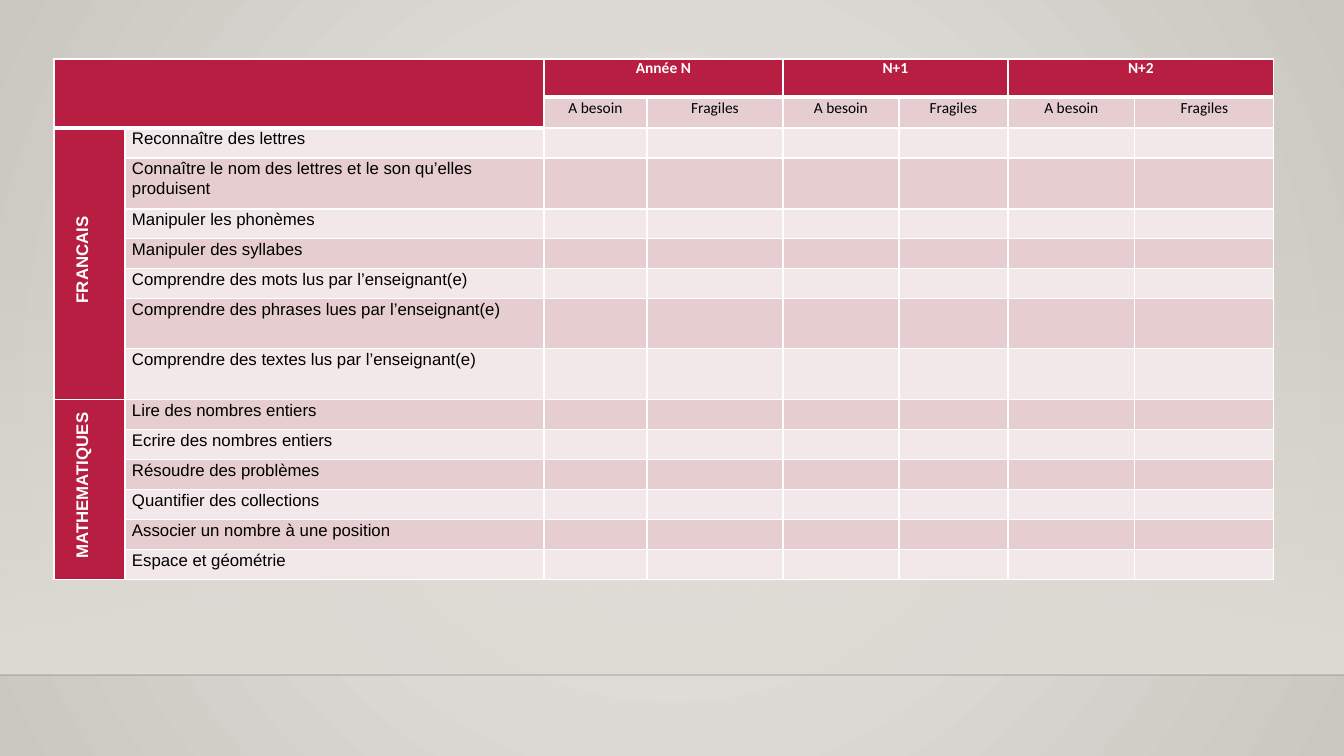
from lxml import etree
from pptx import Presentation
from pptx import util as u
from pptx.dml.color import RGBColor
from pptx.enum import shapes, text
from pptx.oxml.ns import qn

COLORS = {
    "red": "B71E42", "rose": "E6CDCF", "pale": "F3E8E9", "white": "FFFFFF",
    "black": "000000", "glow": "ECEAE7", "edge": "CAC7C1", "floor": "DFDBD5",
    "rule": "000001",
}
COLUMNS = [71, 419, 103, 136, 116, 109, 127, 139]
ROWS = [38, 31, 30, 51, 30, 30, 30, 50, 51] + [30] * 6
YEARS = ["Année N", "N+1", "N+2"]
LEVELS = ["A besoin", "Fragiles"]
SUBJECTS = {
    "FRANCAIS": [
        "Reconnaître des lettres",
        "Connaître le nom des lettres et le son qu’elles produisent",
        "Manipuler les phonèmes",
        "Manipuler des syllabes",
        "Comprendre des mots lus par l’enseignant(e)",
        "Comprendre des phrases lues par l’enseignant(e)",
        "Comprendre des textes lus par l’enseignant(e)",
    ],
    "MATHEMATIQUES": [
        "Lire des nombres entiers",
        "Ecrire des nombres entiers",
        "Résoudre des problèmes",
        "Quantifier des collections",
        "Associer un nombre à une position",
        "Espace et géométrie",
    ],
}


def px(count):
    return u.Emu(round(count * 914400 / 100.8))


def color(name):
    return RGBColor.from_string(COLORS[name])


def set_alpha(srgb, percent):
    etree.SubElement(srgb, qn("a:alpha"), val=str(percent * 1000))


class Slide:
    def __init__(self, page):
        self.page = page

    def gradient(self, fill, names):
        fill.gradient()
        for stop, name in zip(fill.gradient_stops, names):
            stop.color.rgb = color(name)

    def background(self, center, rim):
        self.gradient(self.page.background.fill, (center, rim))
        grad = self.page.element.find(".//" + qn("a:gradFill"))
        grad.remove(grad.find(qn("a:lin")))
        circle = etree.SubElement(grad, qn("a:path"), {"path": "circle"})
        etree.SubElement(circle, qn("a:fillToRect"),
                         l="50000", t="50000", r="50000", b="50000")

    def fading_band(self, left, top, width, height, name):
        """Draw a rectangle that goes from clear at the top to opaque."""
        band = self.page.shapes.add_shape(
            shapes.MSO_SHAPE.RECTANGLE, px(left), px(top), px(width), px(height))
        band.shadow.inherit = False
        band.line.fill.background()
        self.gradient(band.fill, (name, name))
        band.fill.gradient_angle = 270
        set_alpha(band.element.spPr.find(".//" + qn("a:srgbClr")), 0)

    def line(self, x1, y1, x2, y2, name, alpha):
        rule = self.page.shapes.add_connector(
            shapes.MSO_CONNECTOR.STRAIGHT, px(x1), px(y1), px(x2), px(y2))
        rule.line.width = u.Pt(1)
        rule.line.color.rgb = color(name)
        props = rule.element.spPr
        set_alpha(props.find(".//" + qn("a:srgbClr")), alpha)
        etree.SubElement(props, qn("a:effectLst"))

    def table(self, left, top, columns, rows):
        frame = self.page.shapes.add_table(
            len(rows), len(columns), px(left), px(top),
            px(sum(columns)), px(sum(rows)))
        table = frame.table
        table.first_row = table.horz_banding = False
        for column, width in zip(table.columns, columns):
            column.width = px(width)
        for row, height in zip(table.rows, rows):
            row.height = px(height)
        return table

    def cell(self, cell, fill, top=1, bottom=1):
        cell.margin_left = cell.margin_right = px(7)
        cell.margin_top = cell.margin_bottom = 0
        props = cell._tc.get_or_add_tcPr()
        for side, points in zip("LRTB", (1, 1, top, bottom)):
            edge = etree.SubElement(props, qn("a:ln" + side), w=str(u.Pt(points)))
            solid = etree.SubElement(edge, qn("a:solidFill"))
            etree.SubElement(solid, qn("a:srgbClr"), val=COLORS["white"])
        cell.fill.solid()
        cell.fill.fore_color.rgb = color(fill)
        # Keeps empty rows from growing to the default text size
        para = cell.text_frame.paragraphs[0]
        etree.SubElement(para._p, qn("a:endParaRPr"), sz="1100")

    def label(self, cell, words, size, font, name="black", bold=False,
              centered=False, spacing=1.07):
        para = cell.text_frame.paragraphs[0]
        para.line_spacing = spacing
        if centered:
            para.alignment = text.PP_ALIGN.CENTER
        span = para.add_run()
        span.text = words
        span.font.size = u.Pt(size)
        span.font.name = font
        span.font.bold = bold
        span.font.color.rgb = color(name)

    def upward_label(self, cell, words):
        cell._tc.get_or_add_tcPr().set("vert", "vert270")
        self.label(cell, words, 12, "Arial", "white", True, True, 2.0)
        cell.text_frame.paragraphs[0]._p.get_or_add_pPr().set("marL", str(px(8)))


def fill_name(row, column):
    if row == 0 or column == 0 or (row == 1 and column == 1):
        return "red"
    return "rose" if row % 2 else "pale"


def build_skills_table(slide):
    table = slide.table(54, 59, COLUMNS, ROWS)
    for row in range(len(ROWS)):
        for column in range(len(COLUMNS)):
            header_end = 1 if column < 2 else 0
            slide.cell(table.cell(row, column), fill_name(row, column),
                       top=3 if row == header_end + 1 else 1,
                       bottom=3 if row in (0, header_end) else 1)

    table.cell(0, 0).merge(table.cell(1, 1))
    for index, year in enumerate(YEARS):
        first = 2 + index * len(LEVELS)
        table.cell(0, first).merge(table.cell(0, first + 1))
        slide.label(table.cell(0, first), year, 11, "Calibri", "white",
                    bold=True, centered=True, spacing=1.0)
        for offset, level in enumerate(LEVELS):
            slide.label(table.cell(1, first + offset), level, 11, "Calibri",
                        centered=True)

    row = 2
    for subject, skills in SUBJECTS.items():
        table.cell(row, 0).merge(table.cell(row + len(skills) - 1, 0))
        slide.upward_label(table.cell(row, 0), subject)
        for skill in skills:
            slide.label(table.cell(row, 1), skill, 12, "Arial")
            row += 1


def main():
    deck = Presentation()
    deck.slide_width, deck.slide_height = px(1344), px(756)
    slide = Slide(deck.slides.add_slide(deck.slide_layouts[6]))
    slide.background("glow", "edge")
    slide.fading_band(0, 223, 1344, 452, "floor")
    slide.line(0, 675, 1344, 675, "rule", 20)
    build_skills_table(slide)
    deck.save("out.pptx")


if __name__ == "__main__":
    main()
